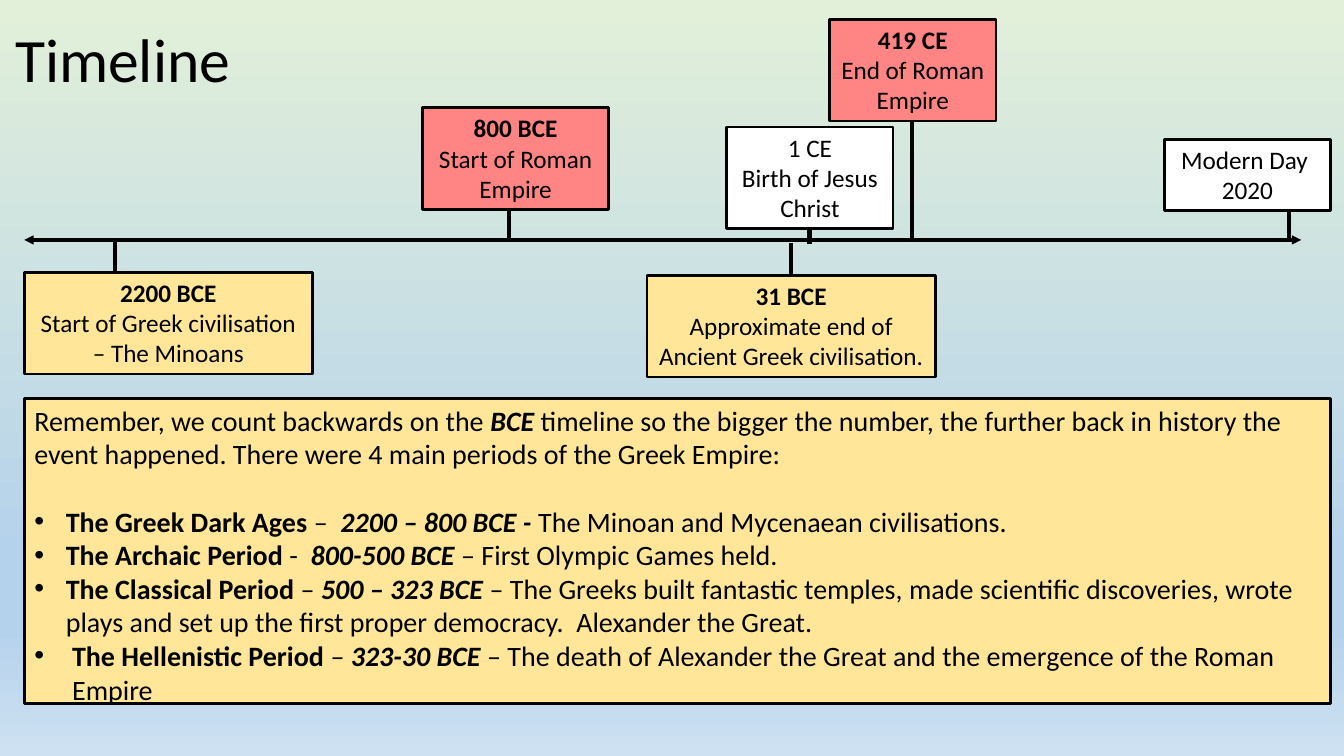
import typing

import pptx
import pptx.dml.color
import pptx.enum.shapes
import pptx.enum.text
import pptx.oxml.ns
import pptx.oxml.xmlchemy
import pptx.slide
import pptx.util

Pt = pptx.util.Pt
qn = pptx.oxml.ns.qn
node = pptx.oxml.xmlchemy.OxmlElement
Enum = pptx.enum.text

BLACK, WHITE, RED, SAND = "000000", "FFFFFF", "FF8585", "FFE699"


class Event(typing.NamedTuple):
    date: str
    label: str
    left: float
    top: float
    width: float
    height: float
    fill: str
    bold: bool
    stem: tuple[float, float, float]  # x, top, bottom


class Period(typing.NamedTuple):
    name: str
    dash: str
    years: str
    note: str
    indent: float = 22.5


EVENTS = [
    Event("Modern Day ", "2020", 831.6, 99.4, 118.8, 51, WHITE, False, (920.9, 149, 171.4)),
    Event("800 BCE", "Start of Roman Empire", 301.7, 77, 133.2, 72.7, RED, True, (363.6, 150, 172)),
    Event("419 CE", "End of Roman Empire", 592.6, 13.7, 118.8, 72.7, RED, True, (651.6, 86.4, 171.4)),
    Event("2200 BCE", "Start of Greek civilisation – The Minoans",
          17.3, 194.4, 205.9, 72.7, SAND, True, (82.1, 172.8, 194.4)),
    Event("31 BCE", "Approximate end of Ancient Greek civilisation.",
          462.2, 196.6, 205.9, 72.7, SAND, True, (565.2, 173.5, 195.8)),
    Event("1 CE", "Birth of Jesus Christ", 519.1, 90.7, 118.8, 72.7, WHITE, False, (578.2, 163.4, 174.2)),
]

INTRO = [
    ("Remember, we count backwards on the ", False, False),
    ("BCE", True, True),
    (" timeline so the bigger the number, the further back in history the event happened. "
     "There were 4 main periods of the Greek Empire:", False, False),
]

PERIODS = [
    Period("The Greek Dark Ages ", "–  ", "2200 – 800 BCE - ", "The Minoan and Mycenaean civilisations."),
    Period("The Archaic Period ", "-  ", "800-500 BCE ", "– First Olympic Games held."),
    Period("The Classical Period ", "– ", "500 – 323 BCE ",
           "– The Greeks built fantastic temples, made scientific discoveries, wrote plays "
           "and set up the first proper democracy.  Alexander the Great."),
    Period("The Hellenistic Period ", "– ", "323-30 BCE ",
           "– The death of Alexander the Great and the emergence of the Roman Empire", 27),
]

STOPS = [(0, "E2F0D9"), (74, "B5D2EC"), (83, "B5D2EC"), (100, "CEE1F2")]


def color(code: str) -> pptx.dml.color.RGBColor:
    return pptx.dml.color.RGBColor.from_string(code)


def style(run, size: float, bold: bool = False, slant: bool = False) -> None:
    font = run.font
    font.name, font.size, font.bold, font.italic = "Calibri", Pt(size), bold, slant
    font.color.rgb = color(BLACK)


def place(shape, left: float, top: float, width: float, height: float) -> None:
    shape.left, shape.top, shape.width, shape.height = Pt(left), Pt(top), Pt(width), Pt(height)


def panel(shape, fill: str) -> None:
    shape.fill.solid()
    shape.fill.fore_color.rgb = color(fill)
    shape.line.color.rgb = color(BLACK)
    shape.line.width = Pt(2)
    frame = shape.text_frame
    frame.word_wrap = True
    frame.auto_size = Enum.MSO_AUTO_SIZE.SHAPE_TO_FIT_TEXT
    frame.vertical_anchor = Enum.MSO_ANCHOR.TOP


def rule(slide: pptx.slide.Slide, x1: float, y1: float, x2: float, y2: float,
         width: float, arrows: bool = False) -> None:
    link = slide.shapes.add_connector(
        pptx.enum.shapes.MSO_CONNECTOR.STRAIGHT, Pt(x1), Pt(y1), Pt(x2), Pt(y2))
    link.line.color.rgb = color(BLACK)
    link.line.width = Pt(width)
    props = link.element.spPr
    if arrows:
        line = props.find(qn("a:ln"))
        for tag in ("a:headEnd", "a:tailEnd"):
            end = node(tag)
            end.set("type", "triangle")
            line.append(end)
    props.append(node("a:effectLst"))


def backdrop(slide: pptx.slide.Slide) -> None:
    fill = slide.background.fill
    fill.gradient()
    fill.gradient_angle = 270
    stops = slide.element.find(".//" + qn("a:gsLst"))
    for old in list(stops):
        stops.remove(old)
    for spot, code in STOPS:
        stop, tint = node("a:gs"), node("a:srgbClr")
        stop.set("pos", str(spot * 1000))
        tint.set("val", code)
        stop.append(tint)
        stops.append(stop)


def heading(slide: pptx.slide.Slide) -> None:
    title = slide.shapes.title
    place(title, 3.6, 5, 828, 79.2)
    frame = title.text_frame
    frame.text = "Timeline"
    frame.auto_size = Enum.MSO_AUTO_SIZE.NONE
    frame.vertical_anchor = Enum.MSO_ANCHOR.MIDDLE
    para = frame.paragraphs[0]
    para.alignment = Enum.PP_ALIGN.LEFT
    para.line_spacing = 0.9
    style(para.runs[0], 44)


def event_box(slide: pptx.slide.Slide, event: Event) -> None:
    box = slide.shapes.add_textbox(
        Pt(event.left), Pt(event.top), Pt(event.width), Pt(event.height))
    panel(box, event.fill)
    box.text_frame.text = f"{event.date}\n{event.label}"
    for para, bold in zip(box.text_frame.paragraphs, (event.bold, False)):
        para.alignment = Enum.PP_ALIGN.CENTER
        style(para.runs[0], 18, bold)


def write(para, parts: list[tuple[str, bool, bool]], indent: float, before: float) -> None:
    for text, bold, slant in parts:
        run = para.add_run()
        run.text = text
        style(run, 20, bold, slant)
    para.space_before = Pt(before)
    props = para._p.get_or_add_pPr()
    props.set("marL", str(Pt(indent)))
    props.set("indent", str(-Pt(indent)))
    if indent:
        mark = node("a:buChar")
        mark.set("char", "•")
    else:
        mark = node("a:buNone")
    props.append(mark)


def summary(slide: pptx.slide.Slide) -> None:
    body = slide.placeholders[1]
    place(body, 17.3, 284.4, 933.1, 225.4)
    panel(body, SAND)
    frame = body.text_frame
    write(frame.paragraphs[0], INTRO, 0, 0)
    for rank, item in enumerate(PERIODS):
        parts = [(item.name, True, False), (item.dash, False, False),
                 (item.years, True, True), (item.note, False, False)]
        write(frame.add_paragraph(), parts, item.indent, 0 if rank else 24)


def main() -> None:
    deck = pptx.Presentation()
    deck.slide_width, deck.slide_height = Pt(960), Pt(540)
    slide = deck.slides.add_slide(deck.slide_layouts[1])

    # Background, title and list of periods
    backdrop(slide)
    heading(slide)
    summary(slide)

    # Time axis with its events
    rule(slide, 17.3, 171.4, 929.5, 171.4, 2.25, arrows=True)
    for event in EVENTS:
        x, top, bottom = event.stem
        rule(slide, x, top, x, bottom, 3)
        event_box(slide, event)

    deck.save("out.pptx")


if __name__ == "__main__":
    main()
